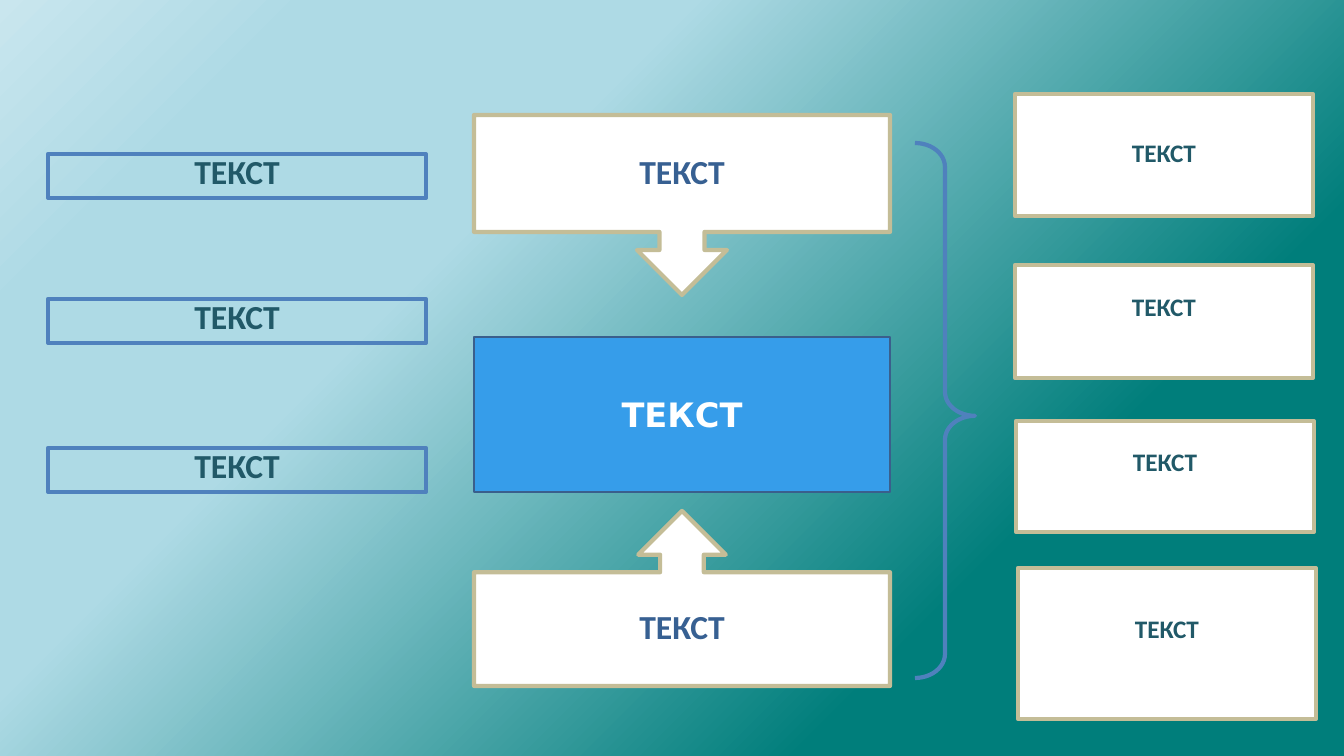
from lxml import etree
from pptx import Presentation
from pptx.dml.color import RGBColor
from pptx.enum.shapes import MSO_SHAPE
from pptx.enum.text import MSO_ANCHOR, MSO_AUTO_SIZE, PP_ALIGN
from pptx.oxml.ns import qn
from pptx.util import Pt

PX = 9071.43  # EMU in one px
RECTANGLE = MSO_SHAPE.RECTANGLE
MIDDLE, TOP = MSO_ANCHOR.MIDDLE, MSO_ANCHOR.TOP
COLORS = {
    "teal": "007E7B", "sky": "AEDAE5", "pale": "C9E6EE",
    "white": "FFFFFF", "sand": "C4BD97", "blue": "4F81BD",
    "bright": "369DEA", "navy": "3A5F8C",
    "dark_teal": "215968", "dark_blue": "376092",
}
WORD = "ТЕКСТ"


def add_figure(kind, bounds, fill, line, width=3):
    figure = page.shapes.add_shape(kind, *[round(px * PX) for px in bounds])
    figure.shadow.inherit = False
    if fill:
        figure.fill.solid()
        figure.fill.fore_color.rgb = RGBColor.from_string(COLORS[fill])
    else:
        figure.fill.background()
    figure.line.color.rgb = RGBColor.from_string(COLORS[line])
    figure.line.width = Pt(width)
    return figure


def write_word(figure, size, color, spacing=None, anchor=MIDDLE, font="Calibri"):
    frame = figure.text_frame
    frame.word_wrap = True
    frame.vertical_anchor = anchor
    para = frame.paragraphs[0]
    para.alignment = PP_ALIGN.CENTER
    para.line_spacing = spacing
    span = para.add_run()
    span.text = WORD
    span.font.name = font
    span.font.size = Pt(size)
    span.font.bold = True
    span.font.color.rgb = RGBColor.from_string(COLORS[color])


deck = Presentation()
deck.slide_width, deck.slide_height = round(1344 * PX), round(756 * PX)
page = deck.slides.add_slide(deck.slide_layouts[6])

# Background: teal at the lower right, pale at the upper left
backdrop = page.background.fill
backdrop.gradient()
gradient = page.background._cSld.find(".//" + qn("a:gradFill"))
stops = gradient.find(qn("a:gsLst"))
for stop in list(stops):
    stops.remove(stop)
for percent, color in [(26, "teal"), (67, "sky"), (85, "sky"), (100, "pale")]:
    stop = etree.SubElement(stops, qn("a:gs"), pos=str(percent * 1000))
    etree.SubElement(stop, qn("a:srgbClr"), val=COLORS[color])
backdrop.gradient_angle = 135

# Left column: outlined labels
for top in (154, 299, 448):
    label = add_figure(RECTANGLE, (48, top, 378, 44), None, "blue")
    write_word(label, 24, "dark_teal", 0.8, TOP)
    label.text_frame.auto_size = MSO_AUTO_SIZE.SHAPE_TO_FIT_TEXT

# Middle column: two callouts pointing at the centre box
for kind, top, height in [(MSO_SHAPE.DOWN_ARROW_CALLOUT, 115, 180),
                          (MSO_SHAPE.UP_ARROW_CALLOUT, 511, 175)]:
    callout = add_figure(kind, (474, top, 416, height), "white", "sand")
    write_word(callout, 24, "dark_blue", Pt(24.8))
centre = add_figure(RECTANGLE, (474, 337, 416, 155), "bright", "navy", 2)
write_word(centre, 24, "white", font="DejaVu Sans")

brace = add_figure(MSO_SHAPE.RIGHT_BRACE, (915, 143, 60, 535), None, "blue")
brace.adjustments[0], brace.adjustments[1] = 0.4, 0.51

# Right column: white boxes, the lower three with raised text
for left, top, height, bottom_inset in [(1015, 94, 122, 5), (1015, 265, 113, 31),
                                        (1016, 421, 111, 31), (1018, 568, 151, 31)]:
    result = add_figure(RECTANGLE, (left, top, 298, height), "white", "sand")
    write_word(result, 18, "dark_teal", 0.85)
    result.text_frame.margin_bottom = round(bottom_inset * PX)

deck.save("out.pptx")
